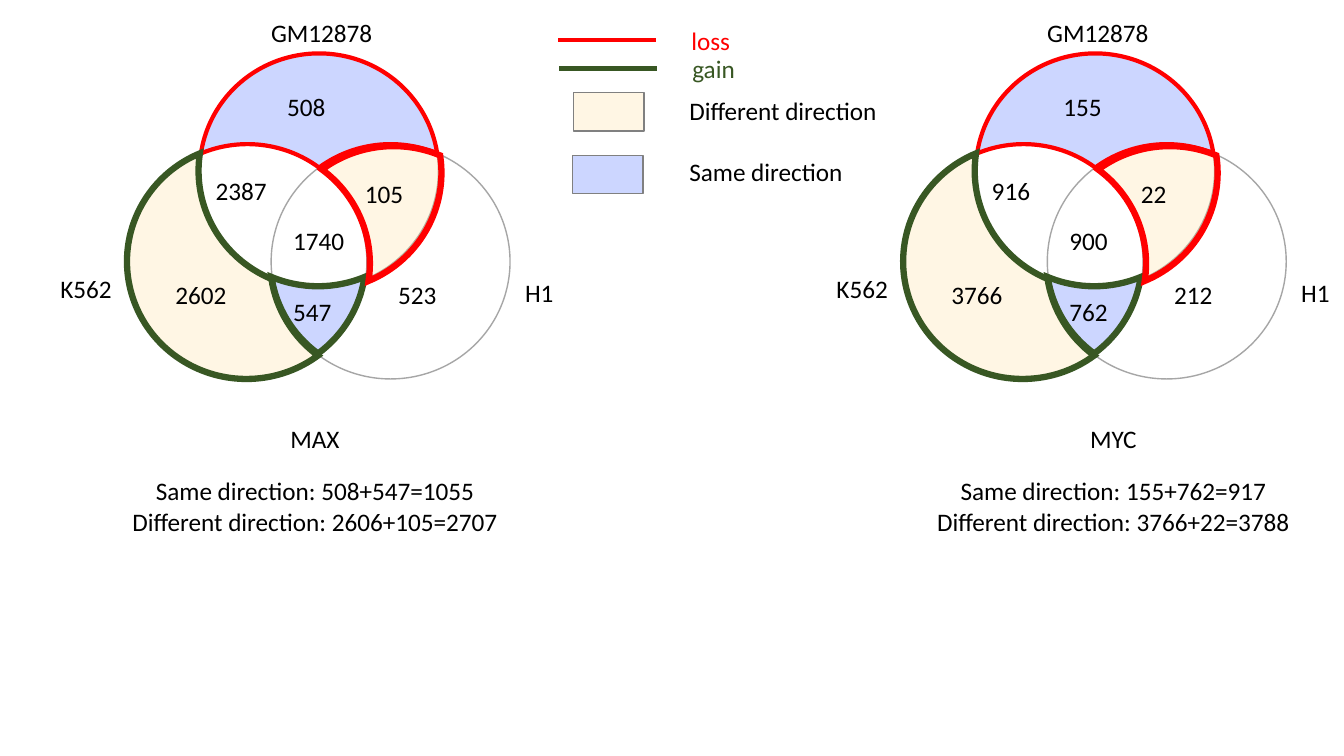
import math
from dataclasses import dataclass

from lxml import etree
from pptx import Presentation
from pptx import util as u
from pptx.dml.color import RGBColor
from pptx.enum import shapes, text
from pptx.oxml.ns import qn


@dataclass(frozen=True)
class Theme:
    font: str = "Calibri"
    size: int = 18
    ink: str = "000000"
    loss: str = "FF0000"
    gain: str = "385723"
    same: str = "0432FF"
    diff: str = "FFD579"
    ring: str = "A6A6A6"
    edge: str = "808080"
    alpha: int = 20
    thin: float = 1
    mid: float = 3
    thick: float = 4.5


T = Theme()
WIDE, HIGH = 133.33, 75
RX, RY = 11.85, 11.65
RINGS = {"G": (31.65, 16.95), "K": (24.55, 25.95), "H": (38.75, 25.95)}
STEP = 77


def cell(n):
    return u.Emu(round(n * u.Inches(0.1)))


def box(x, y, w, h):
    return [cell(n) for n in (x, y, w, h)]


def rgb(code):
    return RGBColor.from_string(code)


def paint(shape, line, width, fill=None):
    shape.shadow.inherit = False
    shape.line.color.rgb = rgb(line)
    shape.line.width = u.Pt(width)
    if fill is None:
        shape.fill.background()
        return
    shape.fill.solid()
    shape.fill.fore_color.rgb = rgb(fill)
    tint = shape.fill._xPr.find(".//" + qn("a:srgbClr"))
    etree.SubElement(tint, qn("a:alpha"), val=str(T.alpha * 1000))


def label(host, words, x, y, w, h=4, color=T.ink, wrap=False, mid=False):
    frame = host.add_textbox(*box(x, y, w, h)).text_frame
    frame.word_wrap = wrap
    frame.auto_size = text.MSO_AUTO_SIZE.SHAPE_TO_FIT_TEXT
    frame.text = words
    for para in frame.paragraphs:
        para.alignment = text.PP_ALIGN.CENTER if mid else text.PP_ALIGN.LEFT
        para.font.name = T.font
        para.font.size = u.Pt(T.size)
        para.font.color.rgb = rgb(color)


def stroke(host, x, y, w, color):
    line = host.add_connector(shapes.MSO_CONNECTOR.STRAIGHT,
                              cell(x), cell(y), cell(x + w), cell(y))
    line.line.color.rgb = rgb(color)
    line.line.width = u.Pt(T.mid)
    etree.SubElement(line._element.spPr, qn("a:effectLst"))


def meet(one, two, side):
    (ax, ay), (bx, by) = RINGS[one], RINGS[two]
    dx, dy = (bx - ax) / RX / 2, (by - ay) / RY / 2
    half = math.hypot(dx, dy)
    rise = side * math.sqrt(1 - half ** 2) / half
    return (ax + RX * (dx - dy * rise), ay + RY * (dy + dx * rise))


def arc(ring, start, end, turn):
    cx, cy = RINGS[ring]
    a, b = (math.atan2((y - cy) / RY, (x - cx) / RX) for x, y in (start, end))
    sweep = turn * ((turn * (b - a)) % math.tau)
    count = math.ceil(abs(sweep) / math.radians(65))
    step = sweep / count
    pull = 4 / 3 * math.tan(step / 4)
    dots = []
    for i in range(count):
        p, q = a + i * step, a + (i + 1) * step
        for angle, lean in ((p, pull), (q, -pull), (q, 0)):
            cos, sin = math.cos(angle), math.sin(angle)
            dots.append((cx + RX * (cos - lean * sin),
                         cy + RY * (sin + lean * cos)))
    return dots


def bend(shape):
    lines = list(shape._element.iter(qn("a:lnTo")))
    for i in range(0, len(lines), 3):
        curve = etree.Element(qn("a:cubicBezTo"))
        lines[i].addprevious(curve)
        for line in lines[i:i + 3]:
            curve.append(line[0])
            line.getparent().remove(line)


def region(host, arcs, shift, line, width, fill):
    dots = [(cell(x + shift[0]), cell(y + shift[1]))
            for part in arcs for x, y in arc(*part)]
    pen = host.build_freeform(*dots[-1], scale=1.0)
    pen.add_line_segments(dots, close=True)
    shape = pen.convert_to_shape()
    bend(shape)
    paint(shape, line, width, fill)
    etree.SubElement(shape.line._ln, qn("a:miter"), lim="800000")


def venn(slide, left, counts):
    host = slide.shapes.add_group_shape().shapes
    for x, y in RINGS.values():
        ring = host.add_shape(shapes.MSO_SHAPE.OVAL,
                              *box(left + x - RX, y - RY, 2 * RX, 2 * RY))
        paint(ring, T.ring, T.thin)
    west, south = meet("G", "K", 1), meet("G", "K", -1)
    east, inner = meet("G", "H", -1), meet("G", "H", 1)
    top, base = meet("K", "H", -1), meet("K", "H", 1)
    regions = [
        ([("G", west, east, 1), ("H", east, top, -1), ("K", top, west, -1)],
         (0, 0), T.loss, T.mid, T.same),
        ([("K", south, base, 1), ("H", base, inner, 1), ("G", inner, south, -1)],
         (-0.1, -0.2), T.gain, T.thick, T.same),
        ([("G", west, inner, -1), ("H", inner, base, -1), ("K", base, west, 1)],
         (-0.1, 0), T.gain, T.thick, T.diff),
        ([("H", top, east, 1), ("G", east, south, 1), ("K", south, top, -1)],
         (0.3, 0.2), T.loss, T.thick, T.diff),
    ]
    for arcs, (dx, dy), line, width, fill in regions:
        region(host, arcs, (left + dx, dy), line, width, fill)
    for name, x, y, w in (("GM12878", 25.9, 1.2, 12.2),
                          ("K562", 5, 26.6, 7.2), ("H1", 51.1, 27, 4.9)):
        label(host, name, left + x, y, w)
    spots = [(16.4, 27.2), (27.5, 8.6), (38.5, 27.2), (20.4, 16.9),
             (28.1, 28.9), (35.2, 17.2), (28.1, 21.9)]
    for count, (x, y) in zip(counts, spots):
        label(host, count, left + x, y, 8.2, wrap=True)


def legend(slide):
    host = slide.shapes.add_group_shape().shapes
    for name, x, y, w, color in (("loss", 55.4, 4, 5.9, T.loss),
                                 ("gain", 55.5, 6.8, 6.3, T.gain)):
        stroke(host, x, y, 9.7, color)
        label(host, name, x + 12.2, y - 2, w, color=color)
    for name, x, y, top, w, fill in (
            ("Different direction", 56.9, 9.2, 9, 20.9, T.diff),
            ("Same direction", 56.8, 15.4, 15, 17.4, T.same)):
        swatch = host.add_shape(shapes.MSO_SHAPE.RECTANGLE, *box(x, y, 7, 3.8))
        paint(swatch, T.edge, T.thin, fill)
        label(host, name, 67.4, top, w)


def notes(slide, center, name, sums, wide):
    label(slide.shapes, name, center - 5.85, 41.5, 11.7, wrap=True, mid=True)
    label(slide.shapes, sums, center - wide / 2, 46.7, wide, 7.1, mid=True)


def main():
    deck = Presentation()
    deck.slide_width, deck.slide_height = cell(WIDE), cell(HIGH)
    slide = deck.slides.add_slide(deck.slide_layouts[6])
    legend(slide)
    venn(slide, 0, ["2602", "508", "523", "2387", "547", "105", "1740"])
    notes(slide, 31.25, "MAX", "Same direction: 508+547=1055\n"
          "Different direction: 2606+105=2707", 38.8)
    venn(slide, STEP, ["3766", "155", "212", "916", "762", "22", "900"])
    notes(slide, 110.45, "MYC", "Same direction: 155+762=917\n"
          "Different direction: 3766+22=3788", 37.5)
    deck.save("out.pptx")


if __name__ == "__main__":
    main()
